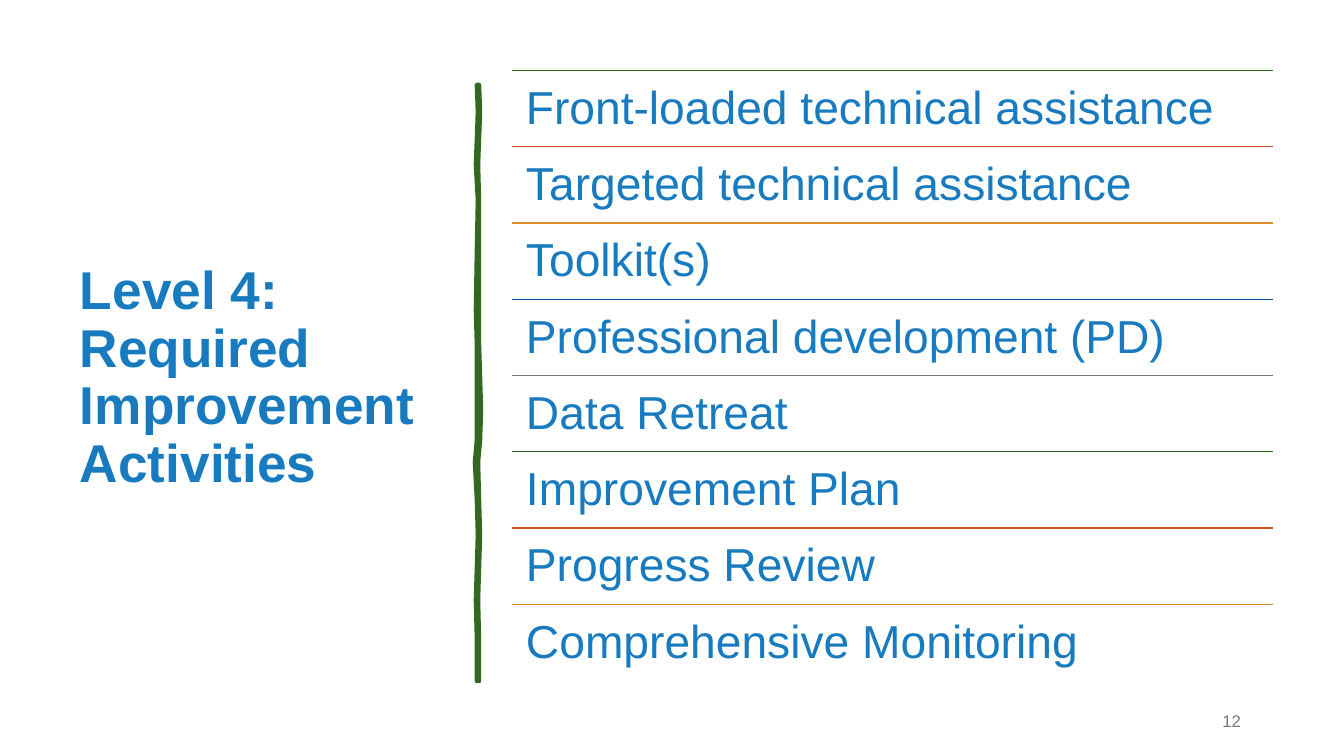
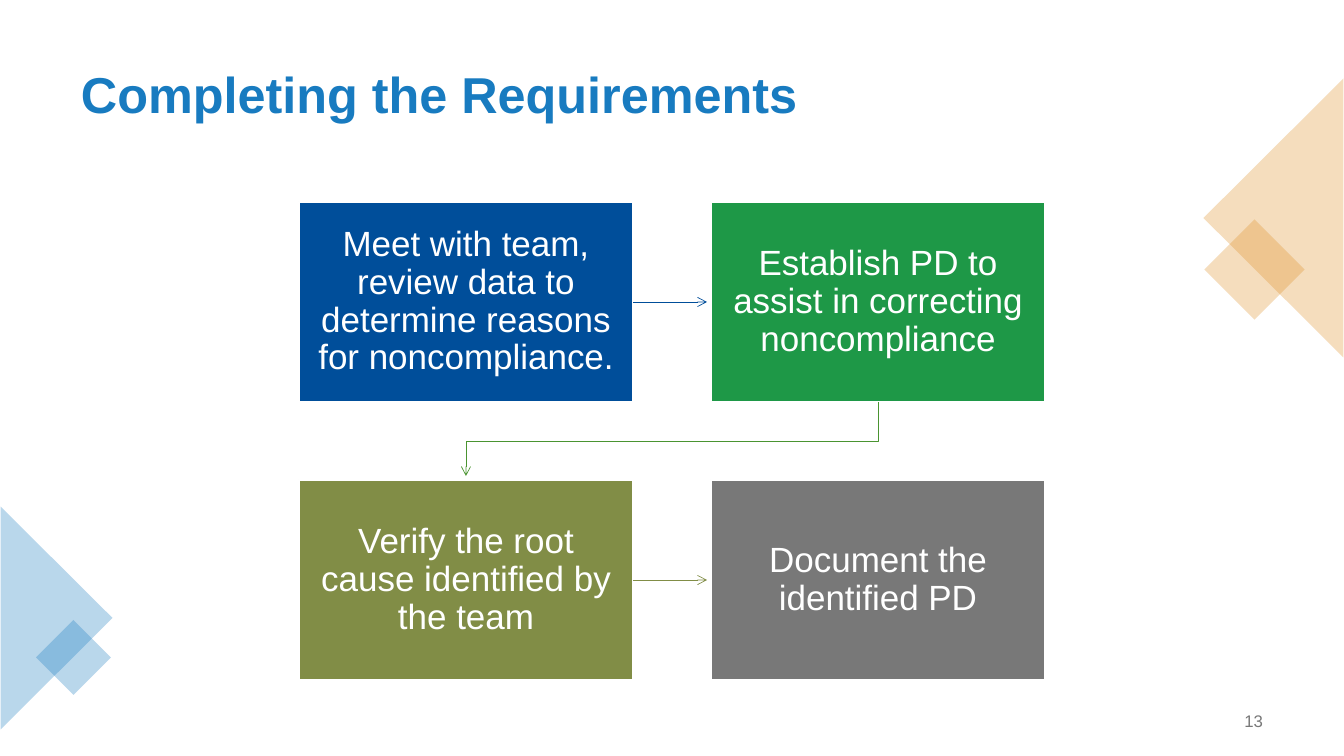
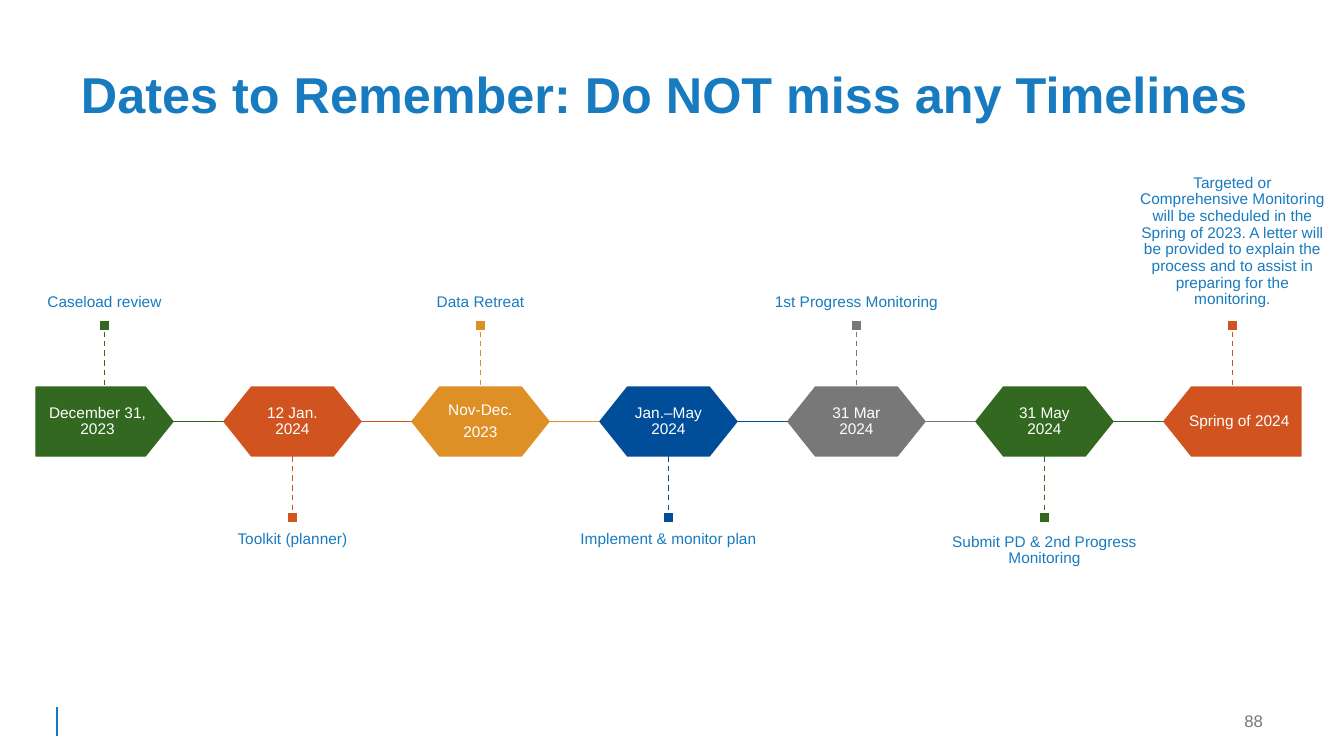
"""Build three slides on improvement activities, requirements and timelines."""
from lxml import etree
from pptx import Presentation
from pptx import util as u
from pptx.dml.color import RGBColor
from pptx.enum import dml, shapes, text
from pptx.oxml.ns import qn

PX = 914400 / 100.8
WIDE, HIGH = 1344, 756
FONT = "Arial"
HEX = {
    "title": "187BC0", "green": "326820", "rust": "D15420", "gold": "DE9027",
    "navy": "004E9A", "gray": "787878", "leaf": "1E9847", "stem": "4A9431",
    "olive": "818D46", "white": "FFFFFF",
}
CYCLE = ["green", "rust", "gold", "navy", "gray"]
KIND = shapes.MSO_SHAPE
MID, TOP, LOW = (text.MSO_ANCHOR.MIDDLE, text.MSO_ANCHOR.TOP,
                 text.MSO_ANCHOR.BOTTOM)
LEFT, MIDST, RIGHT = (text.PP_ALIGN.LEFT, text.PP_ALIGN.CENTER,
                      text.PP_ALIGN.RIGHT)

TASKS = [
    "Front-loaded technical assistance", "Targeted technical assistance",
    "Toolkit(s)", "Professional development (PD)", "Data Retreat",
    "Improvement Plan", "Progress Review", "Comprehensive Monitoring",
]
BRUSH = [
    (85, 477, 479), (112, 478, 480), (165, 476, 478), (200, 478, 479),
    (250, 477, 479), (310, 476, 479), (345, 477, 479), (410, 477, 481),
    (440, 477, 480), (462, 475, 478), (500, 477, 479), (535, 478, 480),
    (600, 476, 478), (640, 477, 479), (681, 477, 479),
]
STEPS = [
    ("Meet with team, review data to determine reasons for noncompliance.",
     "navy"),
    ("Establish PD to assist in correcting noncompliance", "leaf"),
    ("Verify the root cause identified by the team", "olive"),
    ("Document the identified PD", "gray"),
]
DECOR = [
    (KIND.RECTANGLE, (1219, 234, 71, 71), 45, "gold"),
    (KIND.ISOSCELES_TRIANGLE, (1134, 148, 279, 140), 270, "gold"),
    (KIND.ISOSCELES_TRIANGLE, (-55, 562, 223, 112), 90, "title"),
    (KIND.RECTANGLE, (47, 631, 53, 53), 45, "title"),
]
DATES = [
    (["December 31, 2023"], "Caseload review"),
    (["12 Jan. 2024"], "Toolkit (planner)"),
    (["Nov-Dec.", "2023"], "Data Retreat"),
    (["Jan.–May 2024"], "Implement & monitor plan"),
    (["31 Mar 2024"], "1st Progress Monitoring"),
    (["31 May 2024"], "Submit PD & 2nd Progress Monitoring"),
    (["Spring of 2024"],
     "Targeted or Comprehensive Monitoring will be scheduled in the Spring of "
     "2023. A letter will be provided to explain the process and to assist in "
     "preparing for the monitoring."),
]


def emu(*nums):
    return [u.Emu(round(n * PX)) for n in nums]


def rgb(name):
    return RGBColor.from_string(HEX[name])


def write(shape, lines, size, hue, align=LEFT, anchor=MID, pad=(10, 5),
          bold=False, lead=0.9):
    frame = shape.text_frame
    frame.word_wrap = True
    frame.vertical_anchor = anchor
    frame.margin_left, frame.margin_top = emu(*pad)
    frame.margin_right, frame.margin_bottom = emu(*pad)
    for num, line in enumerate(lines):
        para = frame.add_paragraph() if num else frame.paragraphs[0]
        para.alignment = align
        para.line_spacing = lead
        if num:
            para.space_before = u.Pt(4)
        run = para.add_run()
        run.text = line
        font = run.font
        font.name, font.size, font.bold = FONT, u.Pt(size), bold
        font.color.rgb = rgb(hue)


def label(slide, box, *args, **opts):
    write(slide.shapes.add_textbox(*emu(*box)), args[0], *args[1:], **opts)


def block(slide, kind, box, hue, edge=None):
    shape = slide.shapes.add_shape(kind, *emu(*box))
    shape.shadow.inherit = False
    shape.fill.solid()
    shape.fill.fore_color.rgb = rgb(hue)
    if edge:
        shape.line.color.rgb = rgb(edge)
        shape.line.width = u.Pt(1)
    else:
        shape.line.fill.background()
    return shape


def stroke(line, hue, width, dash=False, arrow=False):
    line.color.rgb = rgb(hue)
    line.width = u.Pt(width)
    if dash:
        line.dash_style = dml.MSO_LINE.DASH
    if arrow:
        etree.SubElement(line._get_or_add_ln(), qn("a:tailEnd"), type="arrow")


def rule(slide, ends, hue, width=1, **opts):
    line = slide.shapes.add_connector(shapes.MSO_CONNECTOR.STRAIGHT, *emu(*ends))
    stroke(line.line, hue, width, **opts)
    etree.SubElement(line._element.spPr, qn("a:effectLst"))


def outline(slide, dots, close):
    pen = slide.shapes.build_freeform(*dots[0], scale=PX)
    pen.add_line_segments(dots[1:], close=close)
    shape = pen.convert_to_shape()
    shape.shadow.inherit = False
    return shape


def start(deck, title, number, box=(71, 35, 1203, 125), size=36, edge=1273):
    slide = deck.slides.add_slide(deck.slide_layouts[6])
    label(slide, box, [title], size, "title", bold=True)
    label(slide, (edge - 302, 701, 302, 40), [number], 12, "gray",
          align=RIGHT, lead=1.0)
    return slide


def tasks(deck):
    slide = start(deck, "Level 4: Required Improvement Activities", "12",
                  (70, 71, 377, 616), 38, 1251)
    dots = [(x, y) for y, x, _ in BRUSH] + [(x, y) for y, _, x in BRUSH[::-1]]
    brush = outline(slide, dots, True)
    brush.fill.solid()
    brush.fill.fore_color.rgb = rgb("green")
    stroke(brush.line, "green", 3.25)
    left, top, width, total = 512, 70.5, 761, 610
    row = total / len(TASKS)
    for num, task in enumerate(TASKS):
        y = top + num * row
        rule(slide, (left, y, left + width, y), CYCLE[num % len(CYCLE)])
        label(slide, (left, y, width, row), [task], 33, "title",
              anchor=TOP, pad=(14, 14))


def steps(deck):
    slide = start(deck, "Completing the Requirements", "13")
    for kind, box, turn, hue in DECOR:
        shape = block(slide, kind, box, hue)
        shape.rotation = turn
        tint = shape._element.spPr.find(".//" + qn("a:srgbClr"))
        etree.SubElement(tint, qn("a:alpha"), val="30000")
    left, top, width, high, gap, tip = 299, 202, 334, 200, 78, 74
    for num, (words, hue) in enumerate(STEPS):
        row, col = divmod(num, 2)
        x, y = left + col * (width + gap), top + row * (high + gap)
        box = block(slide, KIND.RECTANGLE, (x, y, width, high), hue, "white")
        write(box, [words], 25, "white", align=MIDST, pad=(16, 17))
        if not col:
            mid = y + high / 2
            rule(slide, (x + width, mid, x + width + tip, mid), hue, 0.5,
                 arrow=True)
    low, start_x, end_x = top + high, left + width * 1.5 + gap, left + width / 2
    bend = low + gap / 2
    elbow = outline(slide, [(start_x, low), (start_x, bend), (end_x, bend),
                            (end_x, low + tip)], False)
    elbow.fill.background()
    stroke(elbow.line, "stem", 0.5, arrow=True)


def dates(deck):
    slide = start(deck, "Dates to Remember: Do NOT miss any Timelines", "88")
    rule(slide, (57, 707, 57, 736), "title", 1.5)
    left, top, width, high, pitch, stem, dot = 36, 387, 137, 69, 188, 56, 11
    low, last = top + high, len(DATES) - 1
    for num, (when, what) in enumerate(DATES):
        x, hue = left + num * pitch, CYCLE[num % len(CYCLE)]
        mid = x + width / 2
        kind = KIND.PENTAGON if num in (0, last) else KIND.HEXAGON
        if num < last:
            rule(slide, (x + width, top + high / 2, x + pitch, top + high / 2),
                 hue)
        mark = block(slide, kind, (x, top, width, high), hue, hue)
        mark.adjustments[0] = 0.4
        if num == last:
            mark._element.spPr.find(qn("a:xfrm")).set("flipH", "1")
        write(mark, when, 11, "white", align=MIDST, pad=(9, 9))
        if num % 2:
            ends, spot, tall, anchor = (low, low + stem), low + stem, 523, TOP
        else:
            ends, spot, tall, anchor = (top - stem, top), top - stem - dot, 138, LOW
        rule(slide, (mid, ends[0], mid, ends[1]), hue, dash=True)
        block(slide, KIND.RECTANGLE, (mid - dot / 2, spot, dot, dot), hue,
              "white")
        label(slide, (mid - pitch / 2, tall, pitch, 181), [what], 11, "title",
              align=MIDST, anchor=anchor, pad=(0, 11))


def main():
    deck = Presentation()
    deck.slide_width, deck.slide_height = emu(WIDE, HIGH)
    for build in (tasks, steps, dates):
        build(deck)
    deck.save("out.pptx")


if __name__ == "__main__":
    main()
